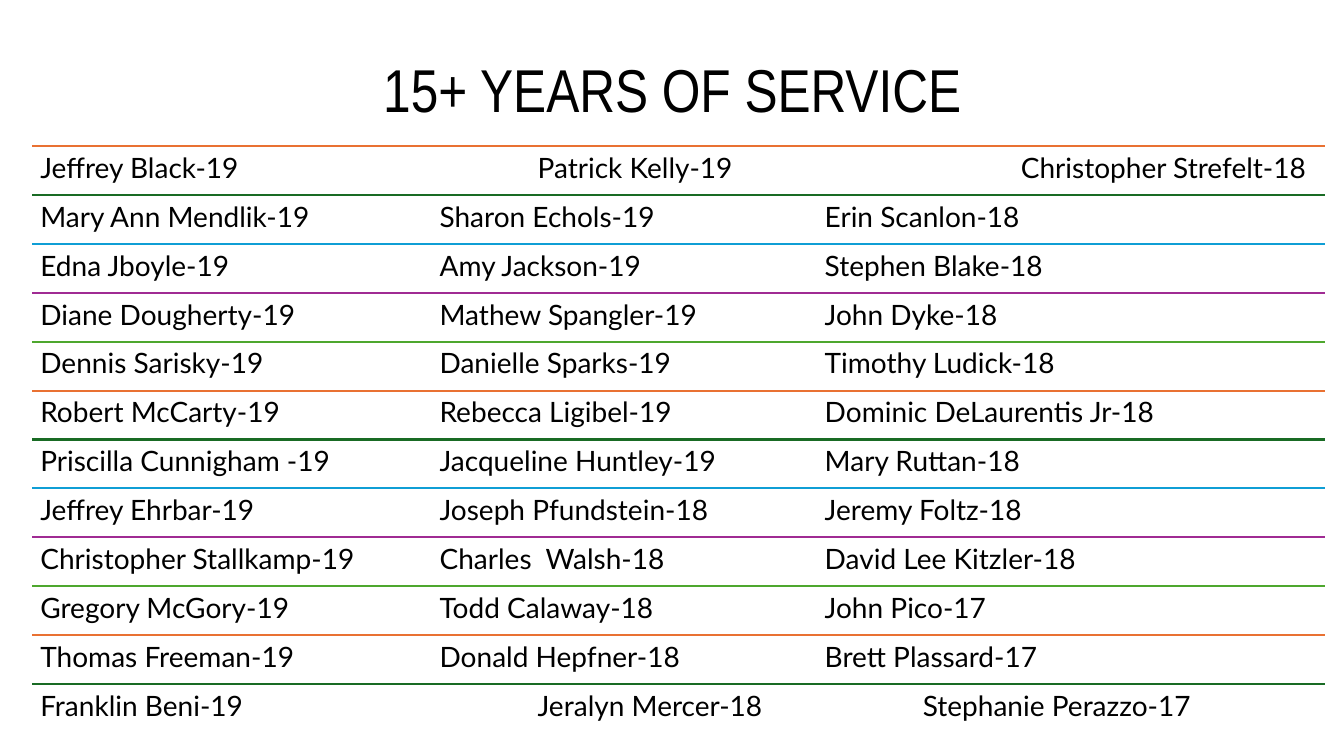
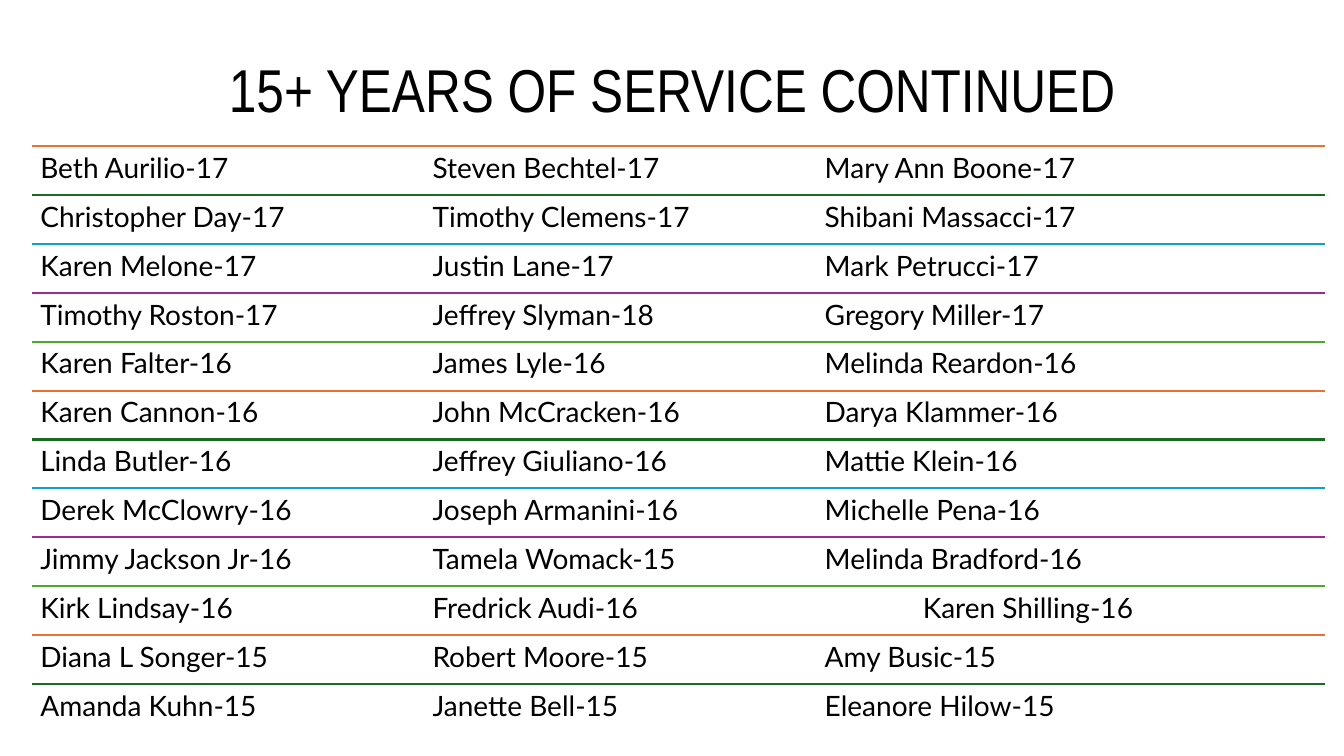
import dataclasses
import itertools

import lxml.etree
import pptx
import pptx.dml.color
import pptx.enum.shapes
import pptx.enum.text
import pptx.oxml.ns
import pptx.presentation
import pptx.slide
import pptx.text.text
import pptx.util

SLIDE_WIDTH, SLIDE_HEIGHT = 13.33, 7.5
TITLE_LEFT, TITLE_TOP, TITLE_WIDTH, TITLE_HEIGHT = 0.92, 0.61, 11.5, 0.62
ROW_LEFT, ROW_TOP, ROW_WIDTH = 0.32, 1.45, 12.82
ROW_PITCH = 0.485
COLUMN_WIDTH = 3.89
TAB_STEP = COLUMN_WIDTH / 4
ROW_INSET = 0.08
RULE_COLORS = ("E97132", "196B24", "0F9ED5", "A02B93", "4EA72E")
TEXT_COLOR = "000000"
TITLE_FONT, BODY_FONT = "Arial Narrow", "Lato"


@dataclasses.dataclass(frozen=True)
class Row:
    """Three names, with the tab steps at which the second and third begin."""

    first: str
    second: str
    third: str
    second_step: int = 4
    third_step: int = 8


@dataclasses.dataclass(frozen=True)
class Roster:
    """One slide's title and rows, with a shift of the second column."""

    title: str
    rows: tuple[Row, ...]
    second_shift: float = 0


ROSTERS = (
    Roster(
        "15+ YEARS OF SERVICE",
        (
            Row("Jeffrey Black-19", "Patrick Kelly-19", "Christopher Strefelt-18", 5, 10),
            Row("Mary Ann Mendlik-19", "Sharon Echols-19", "Erin Scanlon-18"),
            Row("Edna Jboyle-19", "Amy Jackson-19", "Stephen Blake-18"),
            Row("Diane Dougherty-19", "Mathew Spangler-19", "John Dyke-18"),
            Row("Dennis Sarisky-19", "Danielle Sparks-19", "Timothy Ludick-18"),
            Row("Robert McCarty-19", "Rebecca Ligibel-19", "Dominic DeLaurentis Jr-18"),
            Row("Priscilla Cunnigham -19", "Jacqueline Huntley-19", "Mary Ruttan-18"),
            Row("Jeffrey Ehrbar-19", "Joseph Pfundstein-18", "Jeremy Foltz-18"),
            Row("Christopher Stallkamp-19", "Charles  Walsh-18", "David Lee Kitzler-18"),
            Row("Gregory McGory-19", "Todd Calaway-18", "John Pico-17"),
            Row("Thomas Freeman-19", "Donald Hepfner-18", "Brett Plassard-17"),
            Row("Franklin Beni-19", "Jeralyn Mercer-18", "Stephanie Perazzo-17", 5, 9),
        ),
        second_shift=0.07,
    ),
    Roster(
        "15+ YEARS OF SERVICE CONTINUED",
        (
            Row("Beth Aurilio-17", "Steven Bechtel-17", "Mary Ann Boone-17"),
            Row("Christopher Day-17", "Timothy Clemens-17", "Shibani Massacci-17"),
            Row("Karen Melone-17", "Justin Lane-17", "Mark Petrucci-17"),
            Row("Timothy Roston-17", "Jeffrey Slyman-18", "Gregory Miller-17"),
            Row("Karen Falter-16", "James Lyle-16", "Melinda Reardon-16"),
            Row("Karen Cannon-16", "John McCracken-16", "Darya Klammer-16"),
            Row("Linda Butler-16", "Jeffrey Giuliano-16", "Mattie Klein-16"),
            Row("Derek McClowry-16", "Joseph Armanini-16", "Michelle Pena-16"),
            Row("Jimmy Jackson Jr-16", "Tamela Womack-15", "Melinda Bradford-16"),
            Row("Kirk Lindsay-16", "Fredrick Audi-16", "Karen Shilling-16", third_step=9),
            Row("Diana L Songer-15", "Robert Moore-15", "Amy Busic-15"),
            Row("Amanda Kuhn-15", "Janette Bell-15", "Eleanore Hilow-15"),
        ),
    ),
)


def color(hex_text: str) -> pptx.dml.color.RGBColor:
    """Turn a hex string into a colour."""
    return pptx.dml.color.RGBColor.from_string(hex_text)


def set_tab_stops(paragraph: pptx.text.text._Paragraph, stops: tuple[float, ...]) -> None:
    """Give the paragraph left tab stops, in inches from its start."""
    qualified = pptx.oxml.ns.qn
    properties = paragraph._p.get_or_add_pPr()
    tab_list = lxml.etree.SubElement(properties, qualified("a:tabLst"))
    for stop in stops:
        position = str(int(pptx.util.Inches(stop)))
        lxml.etree.SubElement(tab_list, qualified("a:tab"), pos=position, algn="l")


def add_text(
    slide: pptx.slide.Slide,
    text: str,
    *,
    left: float,
    top: float,
    width: float,
    height: float,
    font: str,
    size: float,
    inset: float = 0,
    align: pptx.enum.text.PP_ALIGN = pptx.enum.text.PP_ALIGN.LEFT,
    anchor: pptx.enum.text.MSO_ANCHOR = pptx.enum.text.MSO_ANCHOR.TOP,
    tab_stops: tuple[float, ...] = (),
) -> None:
    """Add a one-paragraph text box."""
    inches = pptx.util.Inches
    shape = slide.shapes.add_textbox(inches(left), inches(top), inches(width), inches(height))
    frame = shape.text_frame
    frame.word_wrap = True
    frame.vertical_anchor = anchor
    frame.margin_left = frame.margin_right = inches(inset)
    frame.margin_top = frame.margin_bottom = inches(inset)
    paragraph = frame.paragraphs[0]
    paragraph.alignment = align
    paragraph.line_spacing = 0.9
    if tab_stops:
        set_tab_stops(paragraph, tab_stops)
    run = paragraph.add_run()
    run.text = text
    run.font.name = font
    run.font.size = pptx.util.Pt(size)
    run.font.color.rgb = color(TEXT_COLOR)


def add_rule(slide: pptx.slide.Slide, top: float, line_color: str) -> None:
    """Draw the coloured line above a row."""
    inches = pptx.util.Inches
    connector = slide.shapes.add_connector(
        pptx.enum.shapes.MSO_CONNECTOR.STRAIGHT,
        inches(ROW_LEFT), inches(top), inches(ROW_LEFT + ROW_WIDTH), inches(top),
    )
    connector.line.color.rgb = color(line_color)
    connector.line.width = pptx.util.Pt(1.5)
    lxml.etree.SubElement(connector._element.spPr, pptx.oxml.ns.qn("a:effectLst"))


def add_roster(presentation: pptx.presentation.Presentation, roster: Roster) -> None:
    """Add a slide with a title and ruled rows of names."""
    slide = presentation.slides.add_slide(presentation.slide_layouts[6])
    add_text(
        slide, roster.title,
        left=TITLE_LEFT, top=TITLE_TOP, width=TITLE_WIDTH, height=TITLE_HEIGHT,
        font=TITLE_FONT, size=43.2,
        align=pptx.enum.text.PP_ALIGN.CENTER, anchor=pptx.enum.text.MSO_ANCHOR.MIDDLE,
    )
    for index, (row, line_color) in enumerate(zip(roster.rows, itertools.cycle(RULE_COLORS))):
        top = ROW_TOP + index * ROW_PITCH
        add_rule(slide, top, line_color)
        add_text(
            slide, "\t".join((row.first, row.second, row.third)),
            left=ROW_LEFT, top=top, width=ROW_WIDTH, height=ROW_PITCH,
            font=BODY_FONT, size=20, inset=ROW_INSET,
            tab_stops=(
                row.second_step * TAB_STEP + roster.second_shift,
                row.third_step * TAB_STEP,
            ),
        )


def main() -> None:
    """Build the presentation and save it."""
    presentation = pptx.Presentation()
    presentation.slide_width = pptx.util.Inches(SLIDE_WIDTH)
    presentation.slide_height = pptx.util.Inches(SLIDE_HEIGHT)
    for roster in ROSTERS:
        add_roster(presentation, roster)
    presentation.save("out.pptx")


if __name__ == "__main__":
    main()
